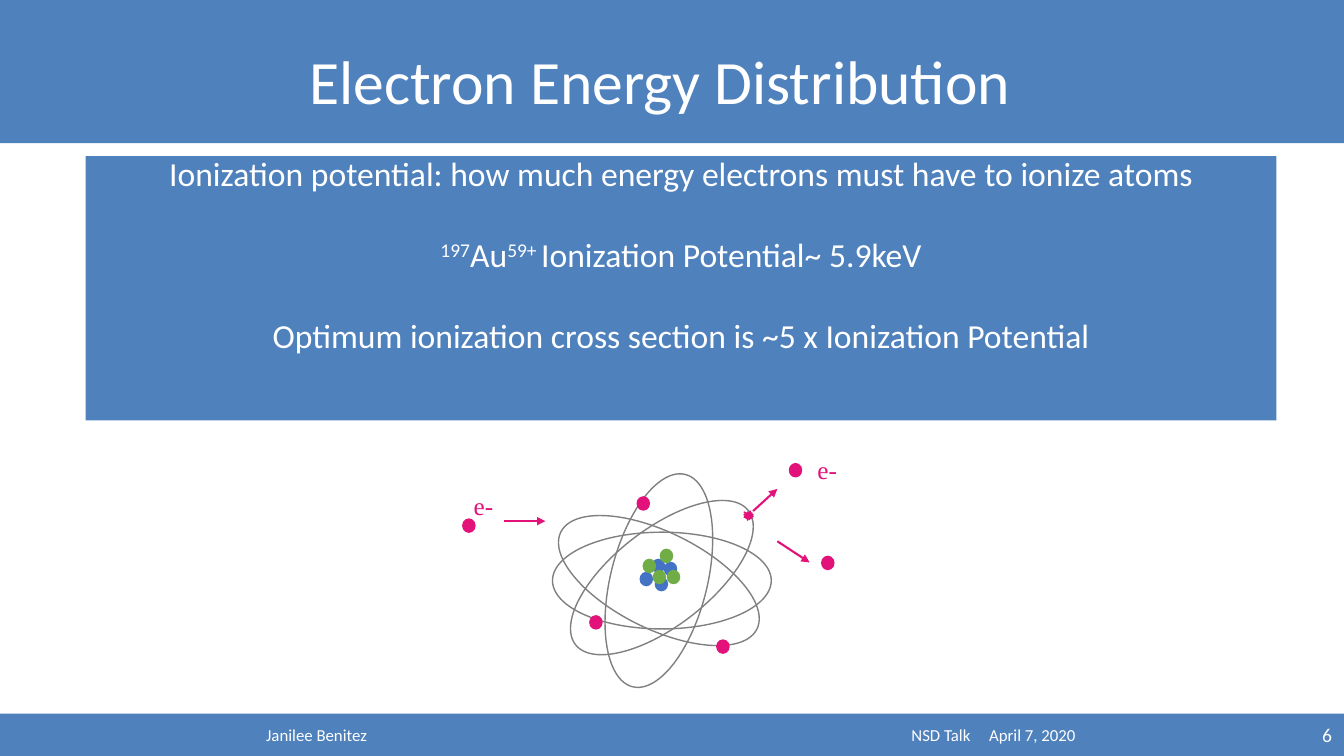
import dataclasses

import pptx
import pptx.dml.color
import pptx.enum.shapes
import pptx.enum.text
import pptx.oxml
import pptx.oxml.ns
import pptx.util

SHAPE = pptx.enum.shapes.MSO_SHAPE
ALIGN = pptx.enum.text.PP_ALIGN
MIDDLE = pptx.enum.text.MSO_ANCHOR.MIDDLE
PX = 9144  # EMU per px, 100 px to the inch


@dataclasses.dataclass(frozen=True)
class Theme:
    band: str = "4F81BD"
    paper: str = "FFFFFF"
    orbit: str = "808080"
    proton: str = "4472C4"
    neutron: str = "70AD47"
    electron: str = "E2127A"
    font: str = "Calibri"
    label_font: str = "Times New Roman"
    title: int = 44
    body: int = 24
    label: int = 18
    number: int = 14
    footer: int = 12


THEME = Theme()


def px(*lengths):
    return [length * PX for length in lengths]


def rgb(code):
    return pptx.dml.color.RGBColor.from_string(code)


def add_part(shapes, kind, box, fill=None, line=None):
    part = shapes.add_shape(kind, *px(*box))
    part.shadow.inherit = False
    if fill:
        part.fill.solid()
        part.fill.fore_color.rgb = rgb(fill)
    else:
        part.fill.background()
    if line:
        part.line.color.rgb = rgb(line)
        part.line.width = pptx.util.Pt(1)
    else:
        part.line.fill.background()
    return part


def set_frame(frame, left=0, top=0, right=0, bottom=0, wrap=True):
    frame.word_wrap = wrap
    frame.auto_size = pptx.enum.text.MSO_AUTO_SIZE.NONE
    frame.vertical_anchor = MIDDLE
    (frame.margin_left, frame.margin_top,
     frame.margin_right, frame.margin_bottom) = px(left, top, right, bottom)


def add_span(para, text, size, color=THEME.paper, font=THEME.font, raised=False):
    span = para.add_run()
    span.text = text
    span.font.size = pptx.util.Pt(size)
    span.font.name = font
    span.font.color.rgb = rgb(color)
    if raised:
        span.font._element.set("baseline", "30000")


def add_header(page, box, text):
    left, top, width, height = box
    band = add_part(page.shapes, SHAPE.RECTANGLE, box, THEME.band)
    title = page.shapes.title
    band.element.addnext(title.element)  # the title lies above its band
    title.left, title.top, title.width, title.height = px(
        left + 166, top + 17, width - 355, height - 17)
    set_frame(title.text_frame, left=10, right=10)
    para = title.text_frame.paragraphs[0]
    para.alignment = ALIGN.CENTER
    para.line_spacing = 1.0
    add_span(para, text, THEME.title)


def add_statements(page, box, statements):
    panel = add_part(page.shapes, SHAPE.RECTANGLE, box, THEME.band)
    frame = panel.text_frame
    set_frame(frame, left=10, right=10, bottom=68)
    for index, statement in enumerate(statements):
        para = frame.add_paragraph() if index else frame.paragraphs[0]
        para.alignment = ALIGN.CENTER
        if index:
            para.space_before = pptx.util.Pt(29)
        for text, raised in statement:
            add_span(para, text, THEME.body, raised=raised)


def add_footer(page, box, texts, number):
    left, top, width, height = box
    band = add_part(page.shapes, SHAPE.RECTANGLE, box, THEME.band)
    set_frame(band.text_frame, left=264)
    para = band.text_frame.paragraphs[0]
    para.alignment = ALIGN.LEFT
    add_span(para, "\t".join(texts), THEME.footer)
    # Tab stops for the talk and its date
    stops = pptx.oxml.ns.qn("a:tabLst")
    tabs = para._p.get_or_add_pPr().makeelement(stops, {})
    for position in px(640, 717):
        tab = tabs.makeelement(pptx.oxml.ns.qn("a:tab"), {"pos": str(position), "algn": "l"})
        tabs.append(tab)
    para._p.get_or_add_pPr().append(tabs)

    # Slide number
    corner = page.shapes.add_textbox(*px(left + width - 302, top + 1, 300, height - 2))
    set_frame(corner.text_frame, left=10, right=10)
    para = corner.text_frame.paragraphs[0]
    para.alignment = ALIGN.RIGHT
    add_span(para, number, THEME.number)


def add_arrow(shapes, start, end):
    kind = pptx.enum.shapes.MSO_CONNECTOR.STRAIGHT
    arrow = shapes.add_connector(kind, *px(*start, *end))
    arrow.line.color.rgb = rgb(THEME.electron)
    arrow.line.width = pptx.util.Pt(1.5)
    line = arrow.line._get_or_add_ln()
    line.append(line.makeelement(pptx.oxml.ns.qn("a:tailEnd"), {"type": "triangle"}))
    properties = arrow.element.spPr
    properties.append(properties.makeelement(pptx.oxml.ns.qn("a:effectLst"), {}))


def add_atom(page, box):
    left, top = box[:2]
    shapes = page.shapes.add_group_shape().shapes

    # Orbits
    for x, y, turn in [(94, 78, 0), (91, 78, 26.3), (94, 75, 322.2), (91, 78, 283.9)]:
        orbit = add_part(shapes, SHAPE.OVAL, (left + x, top + y, 217, 96), line=THEME.orbit)
        orbit.rotation = turn

    # Nucleus, bound electrons and free electrons
    particles = {
        THEME.proton: [(181, 118), (205, 108), (193, 105), (196, 123)],
        THEME.neutron: [(184, 105), (208, 116), (194, 116), (201, 95)],
        THEME.electron: [(178, 43), (131, 161), (257, 185), (5, 65), (329, 10), (361, 102)],
    }
    for color, places in particles.items():
        for x, y in places:
            add_part(shapes, SHAPE.OVAL, (left + x, top + y, 12, 13), color, color)

    # Point of impact
    add_part(shapes, SHAPE.EXPLOSION1, (left + 284, top + 57, 9, 9),
             THEME.electron, THEME.electron)

    # Paths of the free electrons
    for x1, y1, x2, y2 in [(46, 67, 87, 67), (293, 57, 317, 35), (317, 87, 349, 108)]:
        add_arrow(shapes, (left + x1, top + y1), (left + x2, top + y2))

    # Electron labels
    for x, y in [(0, 36), (341, 0)]:
        label = shapes.add_textbox(*px(left + x, top + y, 51, 31))
        set_frame(label.text_frame)
        para = label.text_frame.paragraphs[0]
        para.alignment = ALIGN.CENTER
        add_span(para, "e-", THEME.label, THEME.electron, THEME.label_font)


def main():
    deck = pptx.Presentation()
    deck.slide_width, deck.slide_height = px(1333, 750)
    page = deck.slides.add_slide(deck.slide_layouts.get_by_name("Title Only"))

    add_header(page, (0, 0, 1333, 142), "Electron Energy Distribution")
    add_footer(page, (0, 708, 1333, 42),
               ["Janilee Benitez", "NSD Talk", "April 7, 2020"], "6")
    add_statements(page, (85, 155, 1181, 262), [
        [("Ionization potential: how much energy electrons must have to ionize atoms", False)],
        [("197", True), ("Au", False), ("59+ ", True),
         ("Ionization Potential~ 5.9keV", False)],
        [("Optimum ionization cross section is ~5 x Ionization Potential", False)],
    ])
    add_atom(page, (454, 450, 392, 232))
    deck.save("out.pptx")


if __name__ == "__main__":
    main()
